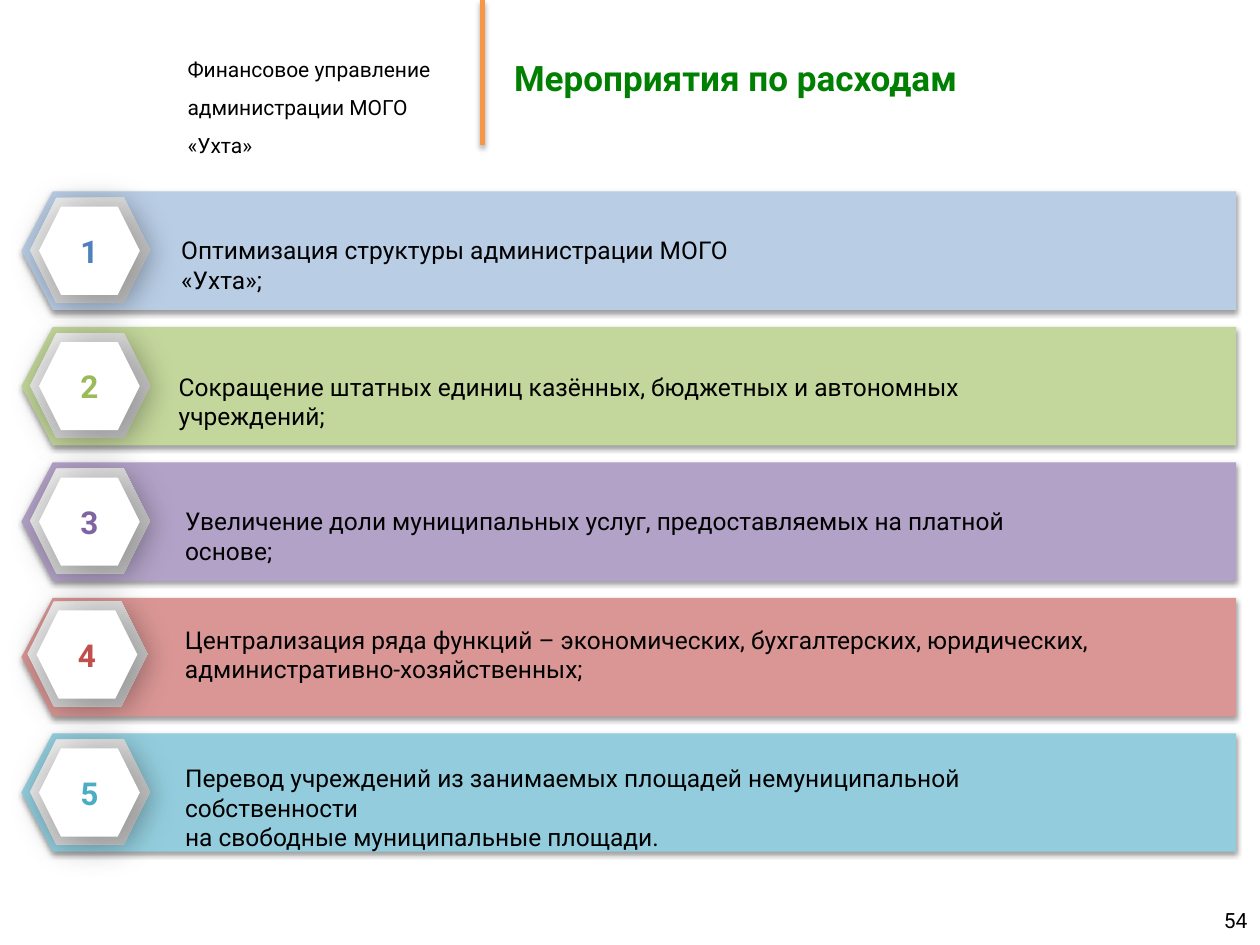
"""Build the slide listing five numbered expenditure measures."""
import lxml.etree
import pptx
import pptx.dml.color
import pptx.enum.shapes
import pptx.enum.text
import pptx.oxml.ns
import pptx.util

Inches = pptx.util.Inches
SHAPE = pptx.enum.shapes.MSO_SHAPE
ALIGN = pptx.enum.text.PP_ALIGN
ANCHOR = pptx.enum.text.MSO_ANCHOR

FONT = "Roboto"
COLORS = {
    "text": "000000", "title": "008000", "divider": "F79646", "white": "FFFFFF",
    "rim_light": "F5F5F5", "rim_dark": "B8B8B8",
}
TITLE = "Мероприятия по расходам"
DEPARTMENT = ["Финансовое управление", "администрации МОГО «Ухта»"]
PAGE_NUMBER = "54"

# Each shadow: opacity %, blur pt, distance pt, direction in degrees.
SHADOWS = {
    "divider": (35, 3.1, 1.8, 90), "band": (38, 3.1, 1.6, 90),
    "rim": (13, 12, 3, 45), "badge": (31, 24, 3, 45),
}
MEASURES = [
    {"lines": ["Оптимизация структуры администрации МОГО «Ухта»;"],
     "band": "B9CDE5", "number": "4F81BD", "text_box": (1.34, 1.82, 5.2, 0.34)},
    {"lines": ["Сокращение штатных единиц казённых, бюджетных и автономных учреждений;"],
     "band": "C3D69B", "number": "9BBB59", "text_box": (1.32, 2.9, 7.59, 0.34)},
    {"lines": ["Увеличение доли муниципальных услуг, предоставляемых на платной основе;"],
     "band": "B3A2C7", "number": "8064A2", "text_box": (1.37, 3.97, 7.35, 0.34)},
    {"lines": ["Централизация ряда функций – экономических, бухгалтерских, юридических, "
               "административно-хозяйственных;"],
     "band": "D99694", "number": "C0504D", "text_box": (1.37, 4.91, 8.43, 0.57),
     "badge_shift": (-0.02, -0.02)},
    {"lines": ["Перевод учреждений из занимаемых площадей немуниципальной собственности",
               "на свободные муниципальные площади."],
     "band": "93CDDD", "number": "4BACC6", "text_box": (1.37, 6.01, 7.58, 0.57)},
]
ROW_TOP, ROW_PITCH = 1.52, 1.075


def rgb(value):
    """Turn a hex string into a colour."""
    return pptx.dml.color.RGBColor.from_string(value)


def add_shadow(shape, name):
    """Give a filled and outlined shape its outer shadow."""
    opacity, blur, distance, direction = SHADOWS[name]
    qn = pptx.oxml.ns.qn
    effects = lxml.etree.SubElement(shape._element.spPr, qn("a:effectLst"))
    shadow = lxml.etree.SubElement(
        effects, qn("a:outerShdw"), blurRad=str(pptx.util.Pt(blur)),
        dist=str(pptx.util.Pt(distance)), dir=str(direction * 60000),
        algn="ctr", rotWithShape="0")
    color = lxml.etree.SubElement(shadow, qn("a:srgbClr"), val=COLORS["text"])
    lxml.etree.SubElement(color, qn("a:alpha"), val=str(opacity * 1000))


def write(shape, lines, size, color="000000", bold=False, align=ALIGN.LEFT,
          anchor=ANCHOR.TOP, spacing=1.0):
    """Write one paragraph per line into a shape."""
    frame = shape.text_frame
    frame.word_wrap = True
    frame.auto_size = pptx.enum.text.MSO_AUTO_SIZE.NONE
    frame.vertical_anchor = anchor
    for index, line in enumerate(lines):
        paragraph = frame.add_paragraph() if index else frame.paragraphs[0]
        paragraph.alignment = align
        paragraph.line_spacing = spacing
        run = paragraph.add_run()
        run.text = line
        run.font.name = FONT
        run.font.size = pptx.util.Pt(size)
        run.font.bold = bold
        run.font.color.rgb = rgb(color)


def add_text(slide, box, lines, size, **style):
    """Add a text box."""
    write(slide.shapes.add_textbox(*map(Inches, box)), lines, size, **style)


def add_solid(group, preset, box, color, shadow):
    """Add a borderless shape with a plain fill and a shadow."""
    shape = group.shapes.add_shape(preset, *map(Inches, box))
    shape.fill.solid()
    shape.fill.fore_color.rgb = rgb(color)
    shape.line.fill.background()
    add_shadow(shape, shadow)
    return shape


def add_measure(slide, index, measure):
    """Add the band and numbered hexagon of one measure."""
    top = ROW_TOP + index * ROW_PITCH
    shift_x, shift_y = measure.get("badge_shift", (0, 0))
    group = slide.shapes.add_group_shape()
    band = add_solid(group, SHAPE.PENTAGON, (0.17, top, 9.64, 0.94), measure["band"], "band")
    band.adjustments[0] = 0.264
    band.rotation = 180
    rim = add_solid(group, SHAPE.HEXAGON, (0.24 + shift_x, top + 0.05 + shift_y, 0.95, 0.83),
                    COLORS["white"], "rim")
    rim.fill.gradient()
    rim.fill.gradient_angle = 315
    for stop, name in zip(rim.fill.gradient_stops, ("rim_light", "rim_dark")):
        stop.color.rgb = rgb(COLORS[name])
    badge = add_solid(group, SHAPE.HEXAGON, (0.31 + shift_x, top + 0.12 + shift_y, 0.8, 0.7),
                      COLORS["white"], "badge")
    write(badge, [str(index + 1)], 18, color=measure["number"], bold=True,
          align=ALIGN.CENTER, anchor=ANCHOR.MIDDLE)


def main():
    """Assemble and save the slide."""
    presentation = pptx.Presentation()
    presentation.slide_width, presentation.slide_height = Inches(10), Inches(7.5)
    slide = presentation.slides.add_slide(presentation.slide_layouts[5])

    add_text(slide, (1.39, 0.3, 2.4, 0.96), DEPARTMENT, 12, spacing=1.5)
    divider = slide.shapes.add_connector(
        pptx.enum.shapes.MSO_CONNECTOR.STRAIGHT, *map(Inches, (3.83, 0, 3.83, 1.15)))
    divider.line.color.rgb = rgb(COLORS["divider"])
    divider.line.width = pptx.util.Pt(3)
    add_shadow(divider, "divider")

    title = slide.shapes.title
    title.left, title.top, title.width, title.height = map(Inches, (3.98, 0.04, 6.02, 1.15))
    write(title, [TITLE], 20, color=COLORS["title"], bold=True, anchor=ANCHOR.MIDDLE)

    for index, measure in enumerate(MEASURES):
        add_measure(slide, index, measure)
    for measure in MEASURES:
        add_text(slide, measure["text_box"], measure["lines"], 14)
    add_text(slide, (7.67, 7.1, 2.33, 0.4), [PAGE_NUMBER], 12,
             align=ALIGN.RIGHT, anchor=ANCHOR.MIDDLE)
    presentation.save("out.pptx")


if __name__ == "__main__":
    main()
